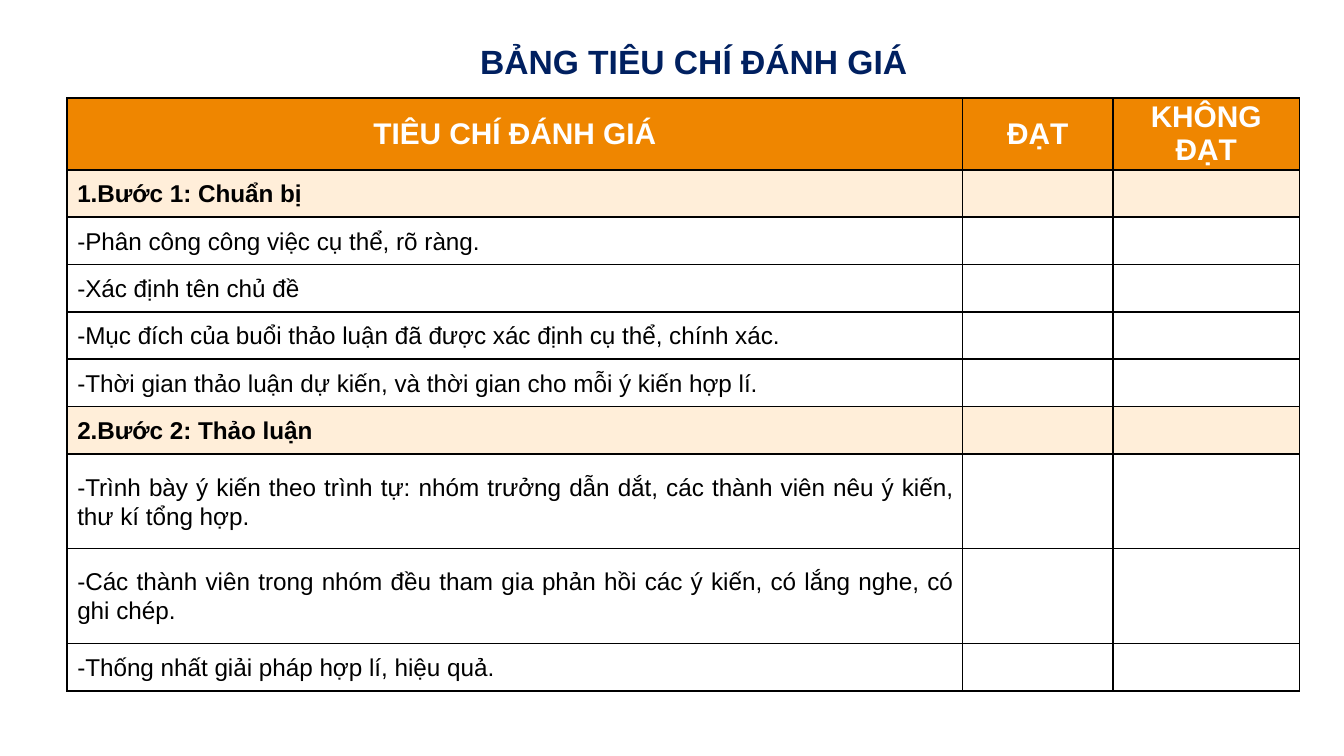
from dataclasses import dataclass

from pptx import Presentation
from pptx.dml.color import RGBColor as Rgb
from pptx.enum.text import MSO_ANCHOR as Anchor, MSO_AUTO_SIZE as Fit, PP_ALIGN as Align
from pptx.oxml import parse_xml
from pptx.oxml.ns import nsdecls
from pptx.util import Emu, Pt

SCALE = 2286


@dataclass(frozen=True)
class Theme:
    font: str = "Arial"
    navy: str = "002060"
    orange: str = "EF8600"
    cream: str = "FFEED9"
    white: str = "FFFFFF"
    black: str = "000000"
    title: int = 18
    head: int = 16
    body: int = 13
    rule: int = 1


@dataclass(frozen=True)
class Style:
    size: int
    color: str
    bold: bool
    align: Align
    fill: str | None = None
    space: float = 1.07


@dataclass(frozen=True)
class Line:
    cells: tuple[str, ...]
    style: Style
    high: int = 141


THEME = Theme()
TITLE = Style(THEME.title, THEME.navy, True, Align.CENTER)
HEAD = Style(THEME.head, THEME.white, True, Align.CENTER, THEME.orange, 1.0)
STEP = Style(THEME.body, THEME.black, True, Align.JUSTIFY, THEME.cream)
ITEM = Style(THEME.body, THEME.black, False, Align.JUSTIFY)

COLS = (2665, 447, 556)
LINES = (
    Line(("TIÊU CHÍ ĐÁNH GIÁ", "ĐẠT", "KHÔNG ĐẠT"), HEAD),
    Line(("1.Bước 1: Chuẩn bị", "", ""), STEP),
    Line(("-Phân công công việc cụ thể, rõ ràng.", "", ""), ITEM),
    Line(("-Xác định tên chủ đề", "", ""), ITEM),
    Line(("-Mục đích của buổi thảo luận đã được xác định cụ thể, chính xác.", "", ""), ITEM),
    Line(("-Thời gian thảo luận dự kiến, và thời gian cho mỗi ý kiến hợp lí.", "", ""), ITEM),
    Line(("2.Bước 2: Thảo luận", "", ""), STEP),
    Line(("-Trình bày ý kiến theo trình tự: nhóm trưởng dẫn dắt, các thành viên nêu ý kiến, "
          "thư kí tổng hợp.", "", ""), ITEM, 282),
    Line(("-Các thành viên trong nhóm đều tham gia phản hồi các ý kiến, có lắng nghe, có "
          "ghi chép.", "", ""), ITEM, 282),
    Line(("-Thống nhất giải pháp hợp lí, hiệu quả.", "", ""), ITEM),
)


def px(count: int) -> Emu:
    return Emu(count * SCALE)


def write(frame, text: str, style: Style) -> None:
    frame.text = text
    para = frame.paragraphs[0]
    para.alignment = style.align
    para.line_spacing = style.space
    font = para.font
    font.name = THEME.font
    font.size = Pt(style.size)
    font.bold = style.bold
    font.color.rgb = Rgb.from_string(style.color)


def edge(cell) -> None:
    props = cell._tc.get_or_add_tcPr()
    for side in ("lnL", "lnR", "lnT", "lnB"):
        props.append(parse_xml(
            f'<a:{side} {nsdecls("a")} w="{Pt(THEME.rule)}"><a:solidFill>'
            f'<a:srgbClr val="{THEME.black}"/></a:solidFill></a:{side}>'))


def paint(cell, text: str, style: Style) -> None:
    write(cell.text_frame, text, style)
    cell.vertical_anchor = Anchor.MIDDLE
    cell.margin_left = cell.margin_right = px(30)
    cell.margin_top = cell.margin_bottom = 0
    edge(cell)
    if style.fill:
        cell.fill.solid()
        cell.fill.fore_color.rgb = Rgb.from_string(style.fill)
    else:
        cell.fill.background()


def add_title(slide, text: str) -> None:
    title = slide.shapes.title
    title.left, title.top, title.width, title.height = map(px, (833, 92, 2464, 160))
    frame = title.text_frame
    write(frame, text, TITLE)
    frame.word_wrap = True
    frame.auto_size = Fit.SHAPE_TO_FIT_TEXT
    frame.vertical_anchor = Anchor.TOP


def add_grid(slide, left: int, top: int) -> None:
    high = sum(line.high for line in LINES)
    grid = slide.shapes.add_table(
        len(LINES), len(COLS), px(left), px(top), px(sum(COLS)), px(high)).table
    grid.first_row = grid.horz_banding = False
    for col, wide in zip(grid.columns, COLS):
        col.width = px(wide)
    for row, line in zip(grid.rows, LINES):
        row.height = px(line.high)
        for cell, text in zip(row.cells, line.cells):
            paint(cell, text, line.style)


def main() -> None:
    deck = Presentation()
    deck.slide_width, deck.slide_height = px(4000), px(2250)
    slide = deck.slides.add_slide(deck.slide_layouts.get_by_name("Title Only"))
    add_title(slide, "BẢNG TIÊU CHÍ ĐÁNH GIÁ")
    add_grid(slide, 200, 292)
    deck.save("out.pptx")


if __name__ == "__main__":
    main()
